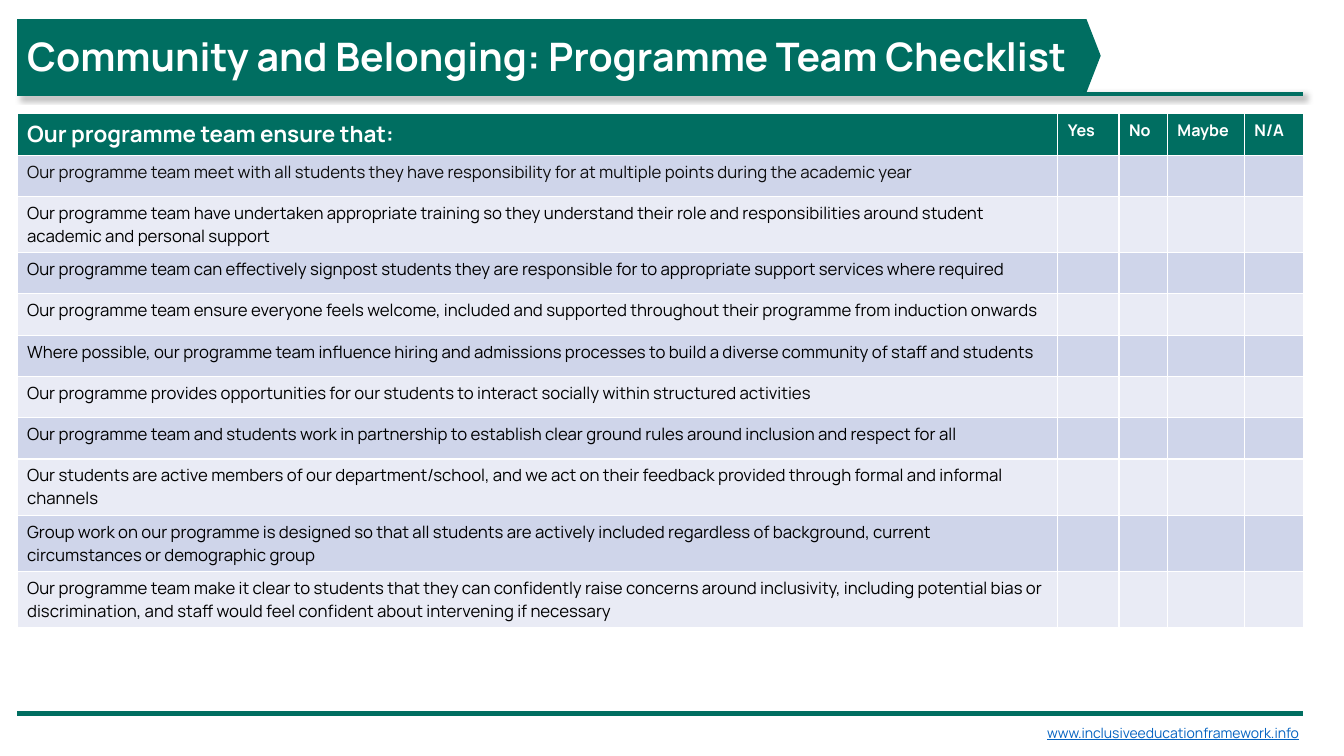
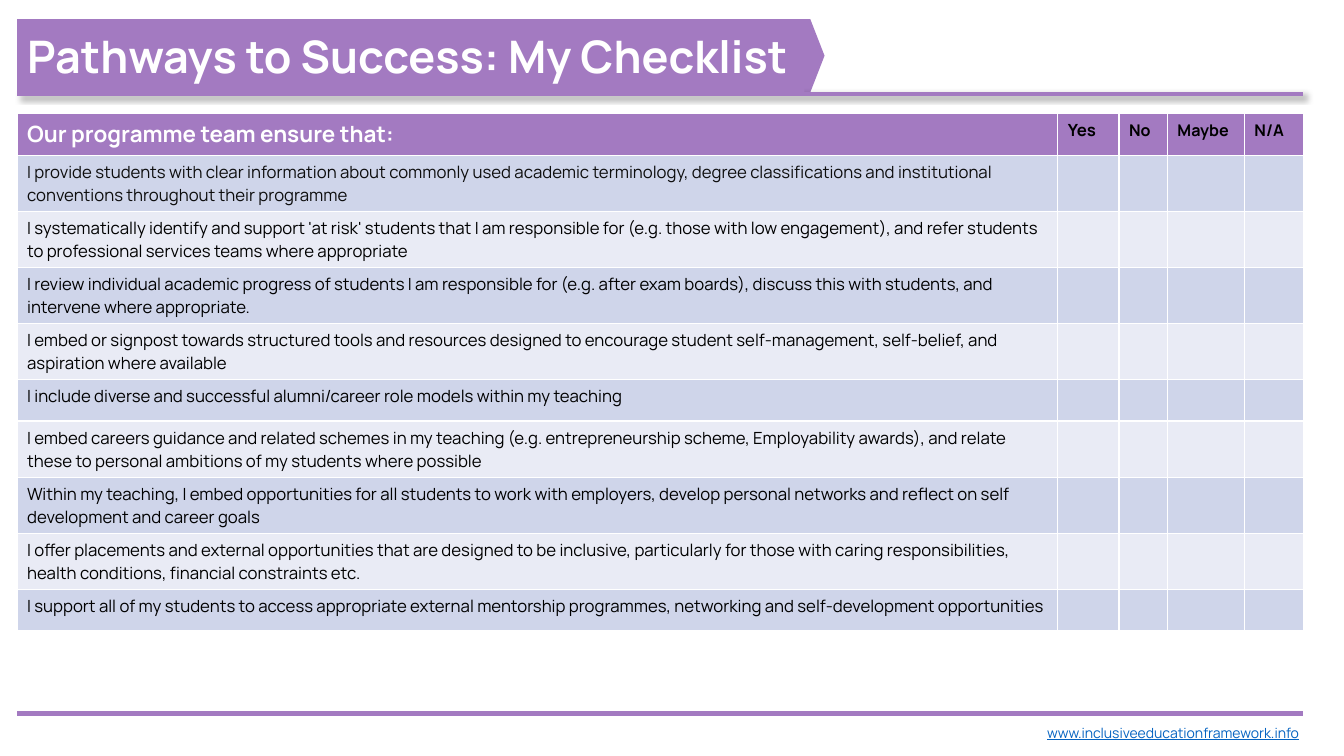
import pptx
import pptx.dml.color
import pptx.enum.shapes
import pptx.enum.text
import pptx.oxml
import pptx.oxml.ns
import pptx.util
from lxml import etree

Cm = pptx.util.Cm
Pt = pptx.util.Pt

COLOURS = {
    "community": "006E61",
    "pathways": "A37AC1",
    "white": "FFFFFF",
    "black": "000000",
    "charcoal": "0D0D0D",
    "odd_row": "CFD5EA",
    "even_row": "E9EBF5",
    "web_address": "0563C1",
}
FONT = "Manrope"
LEFT, RIGHT = 0.43, 32.84
BAND_TOP, BAND_HEIGHT = 0.48, 1.85
POINT_DEPTH, PENNANT_WIDTH = 0.36, 4.8
COLUMN_WIDTHS = (26.23, 1.54, 1.22, 1.94, 1.48)
ROW_HEIGHT = 1.04
HEADINGS = ("Our programme team ensure that:", "Yes", "No", "Maybe", "N/A")
WEB_ADDRESS = "www.inclusiveeducationframework.info"
SHADOW = (
    '<a:outerShdw xmlns:a="http://schemas.openxmlformats.org/drawingml/2006/main" '
    'blurRad="50800" dist="38100" dir="2700000" algn="tl" rotWithShape="0">'
    '<a:srgbClr val="000000"><a:alpha val="40000"/></a:srgbClr></a:outerShdw>'
)

CHECKLISTS = (
    {
        "title": "Community and Belonging: Programme Team Checklist",
        "title_size": 28,
        "title_width": 26.87,
        "pennant_tip": 27.74,
        "theme": "community",
        "answer_ink": "white",
        "answer_sizes": (11.5, 11.5, 11.5, 11.5),
        "statements": (
            "Our programme team meet with all students they have responsibility for at multiple points during the academic year",
            "Our programme team have undertaken appropriate training so they understand their role and responsibilities around student academic and personal support",
            "Our programme team can effectively signpost students they are responsible for to appropriate support services where required",
            "Our programme team ensure everyone feels welcome, included and supported throughout their programme from induction onwards",
            "Where possible, our programme team influence hiring and admissions processes to build a diverse community of staff and students",
            "Our programme provides opportunities for our students to interact socially within structured activities",
            "Our programme team and students work in partnership to establish clear ground rules around inclusion and respect for all",
            "Our students are active members of our department/school, and we act on their feedback provided through formal and informal channels",
            "Group work on our programme is designed so that all students are actively included regardless of background, current circumstances or demographic group",
            "Our programme team make it clear to students that they can confidently raise concerns around inclusivity, including potential bias or discrimination, and staff would feel confident about intervening if necessary",
        ),
    },
    {
        "title": "Pathways to Success: My Checklist",
        "title_size": 32,
        "title_width": 19.84,
        "pennant_tip": 20.78,
        "theme": "pathways",
        "answer_ink": "black",
        "answer_sizes": (12, 11.5, 11.5, 11.5),
        "statements": (
            "I provide students with clear information about commonly used academic terminology, degree classifications and institutional conventions throughout their programme",
            "I systematically identify and support 'at risk' students that I am responsible for (e.g. those with low engagement), and refer students to professional services teams where appropriate",
            "I review individual academic progress of students I am responsible for (e.g. after exam boards), discuss this with students, and intervene where appropriate.",
            "I embed or signpost towards structured tools and resources designed to encourage student self-management, self-belief, and aspiration where available",
            "I include diverse and successful alumni/career role models within my teaching",
            "I embed careers guidance and related schemes in my teaching (e.g. entrepreneurship scheme, Employability awards), and relate these to personal ambitions of my students where possible",
            "Within my teaching, I embed opportunities for all students to work with employers, develop personal networks and reflect on self development and career goals",
            "I offer placements and external opportunities that are designed to be inclusive, particularly for those with caring responsibilities, health conditions, financial constraints etc.",
            "I support all of my students to access appropriate external mentorship programmes, networking and self-development opportunities",
        ),
    },
)


def colour(name):
    """Return the named palette colour."""
    return pptx.dml.color.RGBColor.from_string(COLOURS[name])


def fill_with(target, name):
    """Give a shape or cell a solid palette fill."""
    target.fill.solid()
    target.fill.fore_color.rgb = colour(name)


def write(frame, text, size, ink, bold=False, underline=False):
    """Set the text of a frame and format it."""
    frame.text = text
    paragraph = frame.paragraphs[0]
    paragraph.alignment = pptx.enum.text.PP_ALIGN.LEFT
    font = paragraph.runs[0].font
    font.name = FONT
    font.size = Pt(size)
    font.bold = bold
    font.underline = underline
    font.color.rgb = colour(ink)


def add_rule(slide, top, theme, shadowed=False):
    """Draw a full-width horizontal rule, with a soft shadow if asked."""
    rule = slide.shapes.add_connector(
        pptx.enum.shapes.MSO_CONNECTOR.STRAIGHT, Cm(LEFT), Cm(top), Cm(RIGHT), Cm(top)
    )
    rule.line.color.rgb = colour(theme)
    rule.line.width = Pt(3)
    effects = etree.SubElement(rule.element.spPr, pptx.oxml.ns.qn("a:effectLst"))
    if shadowed:
        effects.append(pptx.oxml.parse_xml(SHADOW))


def add_pennant(slide, tip, theme):
    """Draw the pointed end of the title band."""
    start, shoulder = tip - PENNANT_WIDTH, tip - POINT_DEPTH
    bottom = BAND_TOP + BAND_HEIGHT
    outline = (
        (start, BAND_TOP),
        (start, bottom),
        (shoulder, bottom),
        (tip, BAND_TOP + BAND_HEIGHT / 2),
    )
    builder = slide.shapes.build_freeform(Cm(shoulder), Cm(BAND_TOP))
    builder.add_line_segments([(Cm(x), Cm(y)) for x, y in outline], close=True)
    pennant = builder.convert_to_shape()
    pennant.shadow.inherit = False
    pennant.line.fill.background()
    fill_with(pennant, theme)


def place_title(slide, checklist):
    """Format the title placeholder as a band in front of its pennant."""
    title = slide.shapes.title
    title.left, title.top = Cm(LEFT), Cm(BAND_TOP)
    title.width, title.height = Cm(checklist["title_width"]), Cm(BAND_HEIGHT)
    fill_with(title, checklist["theme"])
    frame = title.text_frame
    frame.word_wrap = True
    frame.auto_size = pptx.enum.text.MSO_AUTO_SIZE.NONE
    frame.vertical_anchor = pptx.enum.text.MSO_ANCHOR.MIDDLE
    write(frame, checklist["title"], checklist["title_size"], "white", bold=True)
    slide.shapes.element.append(title.element)


def add_checklist(slide, checklist):
    """Add the table of statements with empty answer columns."""
    statements = checklist["statements"]
    row_count = len(statements) + 1
    table = slide.shapes.add_table(
        row_count, len(HEADINGS), Cm(LEFT), Cm(2.87),
        Cm(sum(COLUMN_WIDTHS)), Cm(ROW_HEIGHT * row_count),
    ).table
    for column, width in zip(table.columns, COLUMN_WIDTHS):
        column.width = Cm(width)
    for index, row in enumerate(table.rows):
        row.height = Cm(ROW_HEIGHT)
        band = checklist["theme"] if index == 0 else "odd_row" if index % 2 else "even_row"
        for cell in row.cells:
            fill_with(cell, band)
    sizes = (16,) + checklist["answer_sizes"]
    inks = ("white",) + (checklist["answer_ink"],) * len(checklist["answer_sizes"])
    for column, (heading, size, ink) in enumerate(zip(HEADINGS, sizes, inks)):
        write(table.cell(0, column).text_frame, heading, size, ink, bold=True)
    for index, statement in enumerate(statements, start=1):
        ink = "charcoal" if index == 1 else "black"
        write(table.cell(index, 0).text_frame, statement, 12, ink)


def add_footer(slide, theme):
    """Add the bottom rule and the web address."""
    add_rule(slide, 17.98, theme)
    address = slide.shapes.add_textbox(Cm(26.14), Cm(18.14), Cm(7.11), Cm(0.69))
    address.text_frame.word_wrap = True
    write(address.text_frame, WEB_ADDRESS, 10, "web_address", underline=True)


def add_checklist_slide(deck, checklist):
    """Build one complete checklist slide."""
    slide = deck.slides.add_slide(deck.slide_layouts[5])
    add_checklist(slide, checklist)
    add_pennant(slide, checklist["pennant_tip"], checklist["theme"])
    add_rule(slide, 2.36, checklist["theme"], shadowed=True)
    place_title(slide, checklist)
    add_footer(slide, checklist["theme"])


def main():
    """Build and save the deck."""
    deck = pptx.Presentation()
    deck.slide_width, deck.slide_height = Cm(33.87), Cm(19.05)
    for checklist in CHECKLISTS:
        add_checklist_slide(deck, checklist)
    deck.save("out.pptx")


if __name__ == "__main__":
    main()
